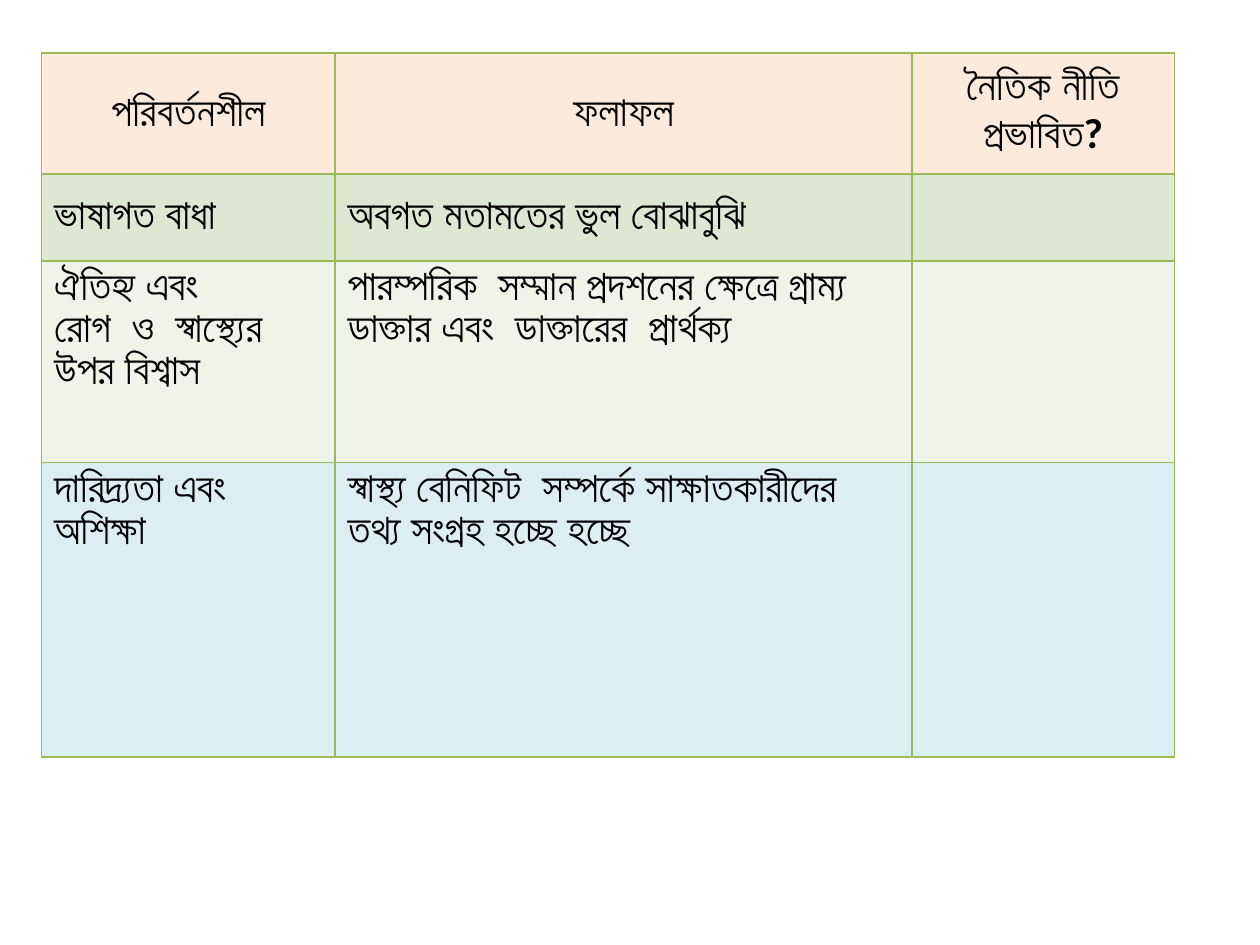
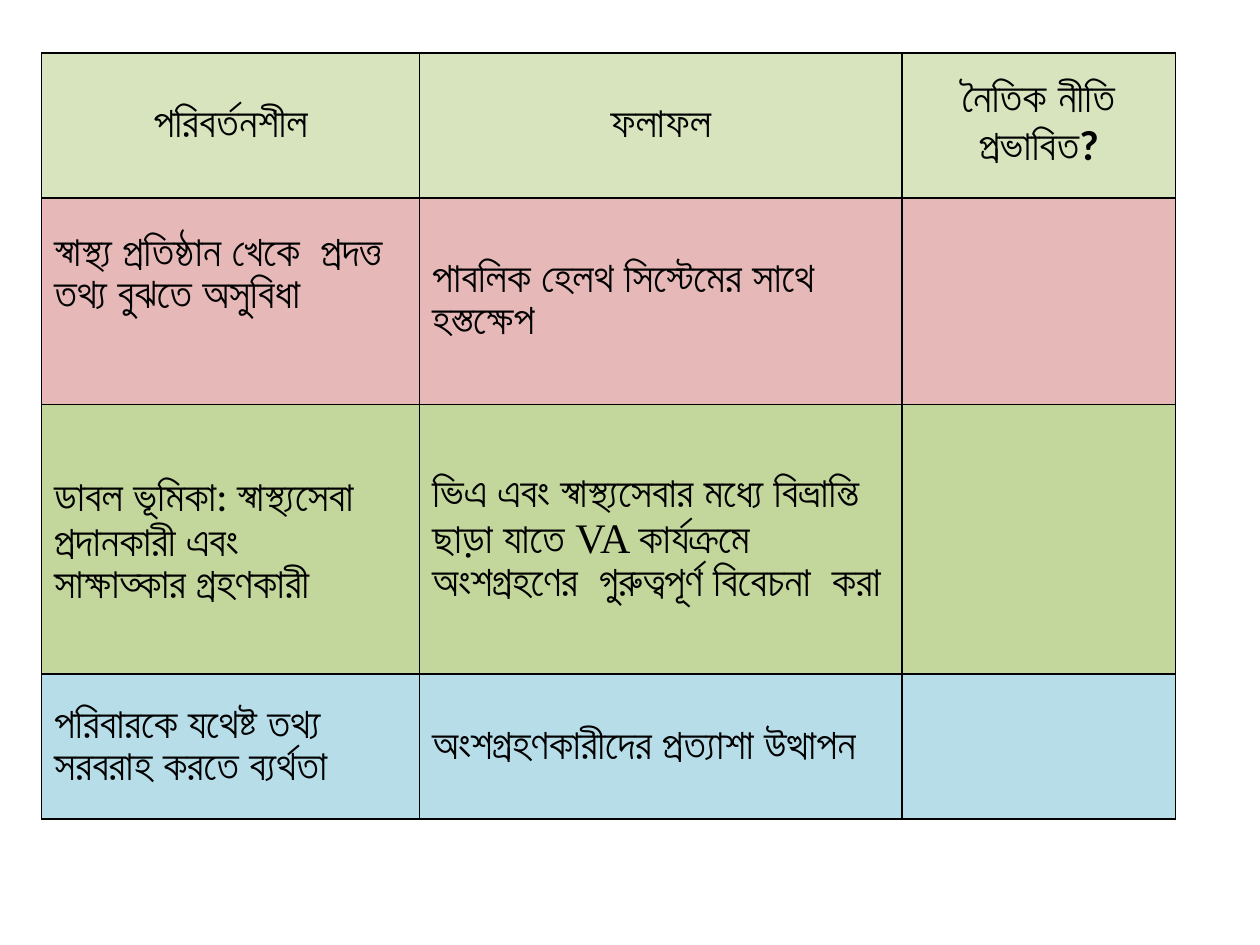
"""Build two slides of tables on field variables, their outcomes and ethics."""
from dataclasses import dataclass

from lxml.etree import SubElement
from pptx import Presentation
from pptx.dml.color import RGBColor
from pptx.enum.text import MSO_ANCHOR as Anchor, PP_ALIGN as Align
from pptx.oxml.ns import qn
from pptx.util import Inches, Pt

TEXT_COLOUR = "000000"
BODY_FONT = "Calibri"
LATIN_FONT = "Times New Roman"
TEXT_SIZE = Pt(24)
BORDER_WIDTH = Pt(1)
TABLE_LEFT, TABLE_TOP = 0.33, 0.42
RUN_BREAK = "|"
HEADINGS = ("পরিবর্তনশীল", "ফলাফল", "নৈতিক নীতি প্রভাবিত?")


@dataclass(frozen=True)
class Row:
    height: float
    fill: str
    variable: str
    outcome: str
    principle: str = ""
    anchor: Anchor = Anchor.MIDDLE
    variable_lift: float = 0.05


@dataclass(frozen=True)
class EthicsTable:
    border: str
    widths: tuple[float, ...]
    rows: tuple[Row, ...]


ETHICS_TABLES = (
    EthicsTable("9BBB59", (2.33, 4.58, 2.08), (
        Row(0.96, "FDEADA", *HEADINGS),
        Row(0.69, "DEE7D1", "ভাষাগত বাধা", "অবগত মতামতের ভুল বোঝাবুঝি"),
        Row(1.6, "EFF3EA", "ঐতিহ্য এবং\nরোগ  ও  স্বাস্থ্যের উপর বিশ্বাস",
            "পারম্পরিক  সম্মান প্রদশনের ক্ষেত্রে গ্রাম্য ডাক্তার এবং  ডাক্তারের  প্রার্থক্য",
            anchor=Anchor.TOP),
        Row(2.34, "DBEEF4", "দারিদ্র্যতা এবং অশিক্ষা",
            "স্বাস্থ্য বেনিফিট  সম্পর্কে সাক্ষাতকারীদের তথ্য সংগ্রহ হচ্ছে হচ্ছে",
            anchor=Anchor.TOP),
    )),
    EthicsTable("000000", (3, 3.83, 2.17), (
        Row(1.15, "D7E4BD", *HEADINGS),
        Row(1.64, "E6B9B8", "স্বাস্থ্য প্রতিষ্ঠান খেকে  প্রদত্ত তথ্য বুঝতে অসুবিধা",
            "পাবলিক হেলথ সিস্টেমের সাথে হস্তক্ষেপ", variable_lift=0.46),
        Row(2.14, "C3D69B",
            "ডাবল ভূমিকা: স্বাস্থ্যসেবা প্রদানকারী এবং\nসাক্ষাত্কার গ্রহণকারী",
            "ভিএ এবং স্বাস্থ্যসেবার মধ্যে বিভ্রান্তি ছাড়া যাতে |VA |"
            "কার্যক্রমে  অংশগ্রহণের  গুরুত্বপূর্ণ বিবেচনা  করা"),
        Row(1.15, "B7DEE8", "পরিবারকে যথেষ্ট তথ্য সরবরাহ করতে ব্যর্থতা",
            "অংশগ্রহণকারীদের প্রত্যাশা উত্থাপন"),
    )),
)


def colour(value: str) -> RGBColor:
    """Turn a hex string into a colour."""
    return RGBColor.from_string(value)


def set_borders(cell, border: str) -> None:
    """Draw the same line on all four sides of a cell."""
    properties = cell._tc.get_or_add_tcPr()
    for position, side in enumerate(("a:lnL", "a:lnR", "a:lnT", "a:lnB")):
        line = SubElement(properties, qn(side), w=str(int(BORDER_WIDTH)))
        fill = SubElement(line, qn("a:solidFill"))
        SubElement(fill, qn("a:srgbClr"), val=border)
        properties.insert(position, line)


def write_text(cell, text: str, is_heading: bool) -> None:
    """Write paragraphs and runs, with Latin words in their own font."""
    frame = cell.text_frame
    frame.text = text.replace(RUN_BREAK, "")
    for paragraph, wording in zip(frame.paragraphs, text.split("\n")):
        paragraph.alignment = Align.CENTER if is_heading else Align.LEFT
        pieces = wording.split(RUN_BREAK)
        if len(pieces) > 1:
            paragraph.clear()
            for piece in pieces:
                paragraph.add_run().text = piece
        for run in paragraph.runs:
            run.font.size = TEXT_SIZE
            run.font.bold = is_heading
            run.font.name = LATIN_FONT if run.text.isascii() else BODY_FONT
            run.font.color.rgb = colour(TEXT_COLOUR)


def draw_table(slide, content: EthicsTable) -> None:
    """Add one table with its fills, borders and text."""
    rows, widths = content.rows, content.widths
    table = slide.shapes.add_table(
        len(rows), len(widths), Inches(TABLE_LEFT), Inches(TABLE_TOP),
        Inches(sum(widths)), Inches(sum(row.height for row in rows))).table
    table.horz_banding = False
    for column, width in zip(table.columns, widths):
        column.width = Inches(width)
    for row_index, row in enumerate(rows):
        table.rows[row_index].height = Inches(row.height)
        for column_index, text in enumerate((row.variable, row.outcome, row.principle)):
            cell = table.cell(row_index, column_index)
            cell.vertical_anchor = row.anchor
            cell.fill.solid()
            cell.fill.fore_color.rgb = colour(row.fill)
            set_borders(cell, content.border)
            write_text(cell, text, is_heading=row_index == 0)
        table.cell(row_index, 0).margin_bottom = Inches(row.variable_lift)


def main() -> None:
    """Build and save the presentation."""
    deck = Presentation()
    deck.slide_width, deck.slide_height = Inches(10), Inches(7.5)
    blank_layout = deck.slide_layouts.get_by_name("Blank")
    for content in ETHICS_TABLES:
        draw_table(deck.slides.add_slide(blank_layout), content)
    deck.save("out.pptx")


if __name__ == "__main__":
    main()
